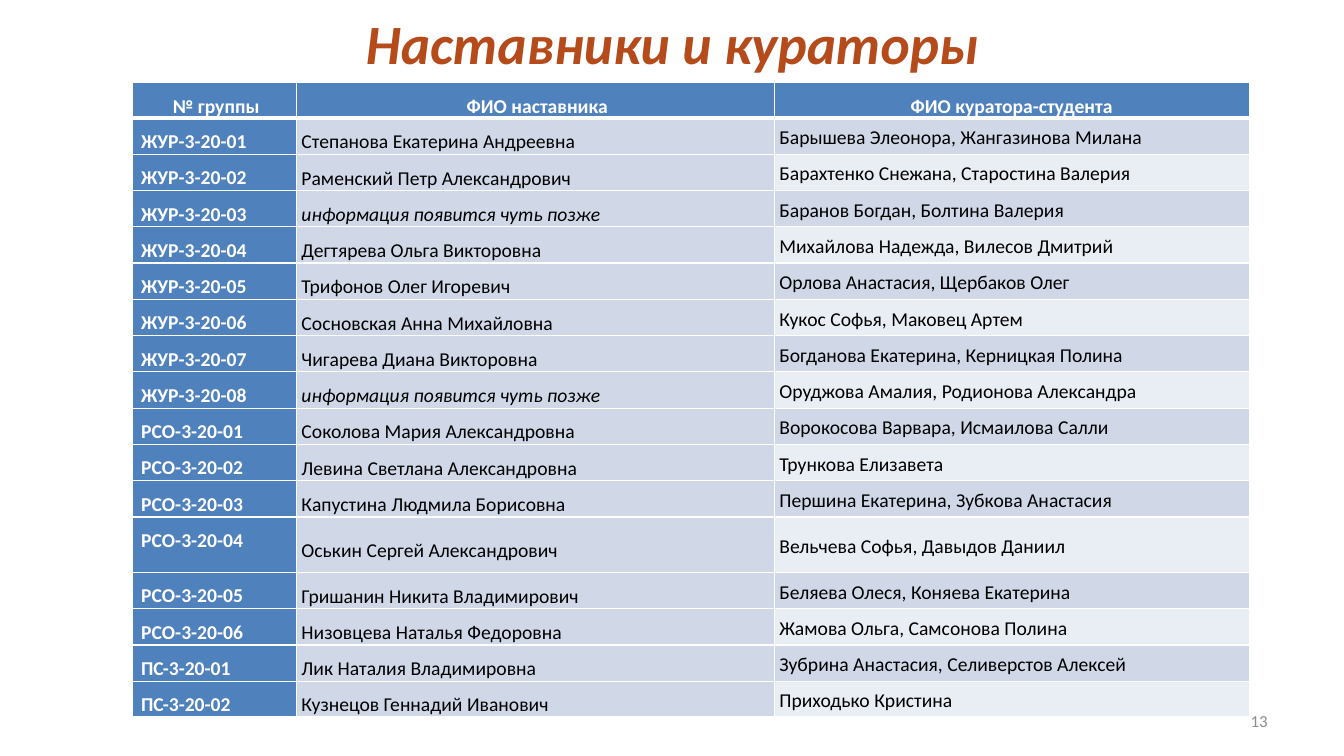
from lxml import etree
from pptx import Presentation
from pptx.dml.color import RGBColor
from pptx.enum.text import MSO_ANCHOR, PP_ALIGN
from pptx.oxml.ns import qn
from pptx.util import Inches, Pt

MIDDLE, TOP = MSO_ANCHOR.MIDDLE, MSO_ANCHOR.TOP
LEFT, CENTER, RIGHT = PP_ALIGN.LEFT, PP_ALIGN.CENTER, PP_ALIGN.RIGHT
COLORS = {
    "title": "B54B1B",
    "header": "4F81BD",
    "band_dark": "D0D8E8",
    "band_light": "E9EDF4",
    "white": "FFFFFF",
    "black": "000000",
    "number": "8C8C8C",
}
PENDING = "информация появится чуть позже"
ROWS = [
    ("№ группы", "ФИО наставника", "ФИО куратора-студента"),
    ("ЖУР-3-20-01", "Степанова Екатерина Андреевна", "Барышева Элеонора, Жангазинова Милана"),
    ("ЖУР-3-20-02", "Раменский Петр Александрович", "Барахтенко Снежана, Старостина Валерия"),
    ("ЖУР-3-20-03", PENDING, "Баранов Богдан, Болтина Валерия"),
    ("ЖУР-3-20-04", "Дегтярева Ольга Викторовна", "Михайлова Надежда, Вилесов Дмитрий"),
    ("ЖУР-3-20-05", "Трифонов Олег Игоревич", "Орлова Анастасия, Щербаков Олег"),
    ("ЖУР-3-20-06", "Сосновская Анна Михайловна", "Кукос Софья, Маковец Артем"),
    ("ЖУР-3-20-07", "Чигарева Диана Викторовна", "Богданова Екатерина, Керницкая Полина"),
    ("ЖУР-3-20-08", PENDING, "Оруджова Амалия, Родионова Александра"),
    ("РСО-3-20-01", "Соколова Мария Александровна", "Ворокосова Варвара, Исмаилова Салли"),
    ("РСО-3-20-02", "Левина Светлана Александровна", "Трункова Елизавета"),
    ("РСО-3-20-03", "Капустина Людмила Борисовна", "Першина Екатерина, Зубкова Анастасия"),
    ("РСО-3-20-04", "Оськин Сергей Александрович", "Вельчева Софья, Давыдов Даниил"),
    ("РСО-3-20-05", "Гришанин Никита Владимирович", "Беляева Олеся, Коняева Екатерина"),
    ("РСО-3-20-06", "Низовцева Наталья Федоровна", "Жамова Ольга, Самсонова Полина"),
    ("ПС-3-20-01", "Лик Наталия Владимировна", "Зубрина Анастасия, Селиверстов Алексей"),
    ("ПС-3-20-02", "Кузнецов Геннадий Иванович", "Приходько Кристина"),
]
COLUMN_WIDTHS = [1.63, 4.74, 4.71]
LAST_ROW = len(ROWS) - 1
ROW_HEIGHTS = {0: 0.33, 12: 0.55, LAST_ROW: 0.33}
TOP_ANCHORED_GROUPS = range(2, 15)


def write(text_frame, text, size, color, align, bold=False, italic=False):
    text_frame.text = text
    paragraph = text_frame.paragraphs[0]
    paragraph.alignment = align
    font = paragraph.runs[0].font
    font.name = "Calibri"
    font.size = Pt(size)
    font.bold = bold
    font.italic = italic
    font.color.rgb = RGBColor.from_string(COLORS[color])
    return paragraph


def add_border(cell, side, width):
    line = etree.SubElement(cell._tc.get_or_add_tcPr(), qn(f"a:{side}"), w=str(Pt(width)))
    fill = etree.SubElement(line, qn("a:solidFill"))
    etree.SubElement(fill, qn("a:srgbClr"), val=COLORS["white"])


presentation = Presentation()
presentation.slide_width = Inches(13.33)
presentation.slide_height = Inches(7.5)
slide = presentation.slides.add_slide(presentation.slide_layouts[6])

title = slide.shapes.add_textbox(Inches(0.67), Inches(0.11), Inches(12), Inches(0.62))
title.text_frame.word_wrap = True
title.text_frame.vertical_anchor = MIDDLE
write(title.text_frame, "Наставники и кураторы", 39.6, "title", CENTER, bold=True, italic=True)

table = slide.shapes.add_table(
    len(ROWS), len(COLUMN_WIDTHS), Inches(1.31), Inches(0.82), Inches(11.07), Inches(6.31)
).table
for column, width in zip(table.columns, COLUMN_WIDTHS):
    column.width = Inches(width)

for row_index, names in enumerate(ROWS):
    table.rows[row_index].height = Inches(ROW_HEIGHTS.get(row_index, 0.36))
    is_header = row_index == 0
    for column_index, text in enumerate(names):
        cell = table.cell(row_index, column_index)
        is_group = column_index == 0
        is_curator = column_index == 2
        on_blue = is_header or is_group

        cell.margin_left = cell.margin_right = Inches(0.05)
        cell.margin_top = cell.margin_bottom = 0
        top_anchored = is_group and row_index in TOP_ANCHORED_GROUPS
        cell.vertical_anchor = TOP if top_anchored else MIDDLE

        paragraph = write(
            cell.text_frame, text, 14,
            "white" if on_blue else "black",
            CENTER if is_header else LEFT,
            bold=on_blue, italic=text == PENDING,
        )
        paragraph.line_spacing = 1.15 if is_curator and not is_header else 1.5
        if is_group or (is_header and not is_curator):
            paragraph._p.get_or_add_pPr().set("indent", str(Inches(0.04)))

        add_border(cell, "lnL", 1)
        add_border(cell, "lnR", 1)
        add_border(cell, "lnT", 3 if row_index == 1 else 1)
        add_border(cell, "lnB", 3 if is_header else 1)

        if on_blue:
            fill_name = "header"
        elif is_curator and row_index % 2 == 0:
            fill_name = "band_light"
        else:
            fill_name = "band_dark"
        cell.fill.solid()
        cell.fill.fore_color.rgb = RGBColor.from_string(COLORS[fill_name])

number = slide.shapes.add_textbox(Inches(9.56), Inches(6.95), Inches(3.11), Inches(0.4))
number.text_frame.word_wrap = True
number.text_frame.vertical_anchor = MIDDLE
write(number.text_frame, "13", 12, "number", RIGHT)

presentation.save("out.pptx")
